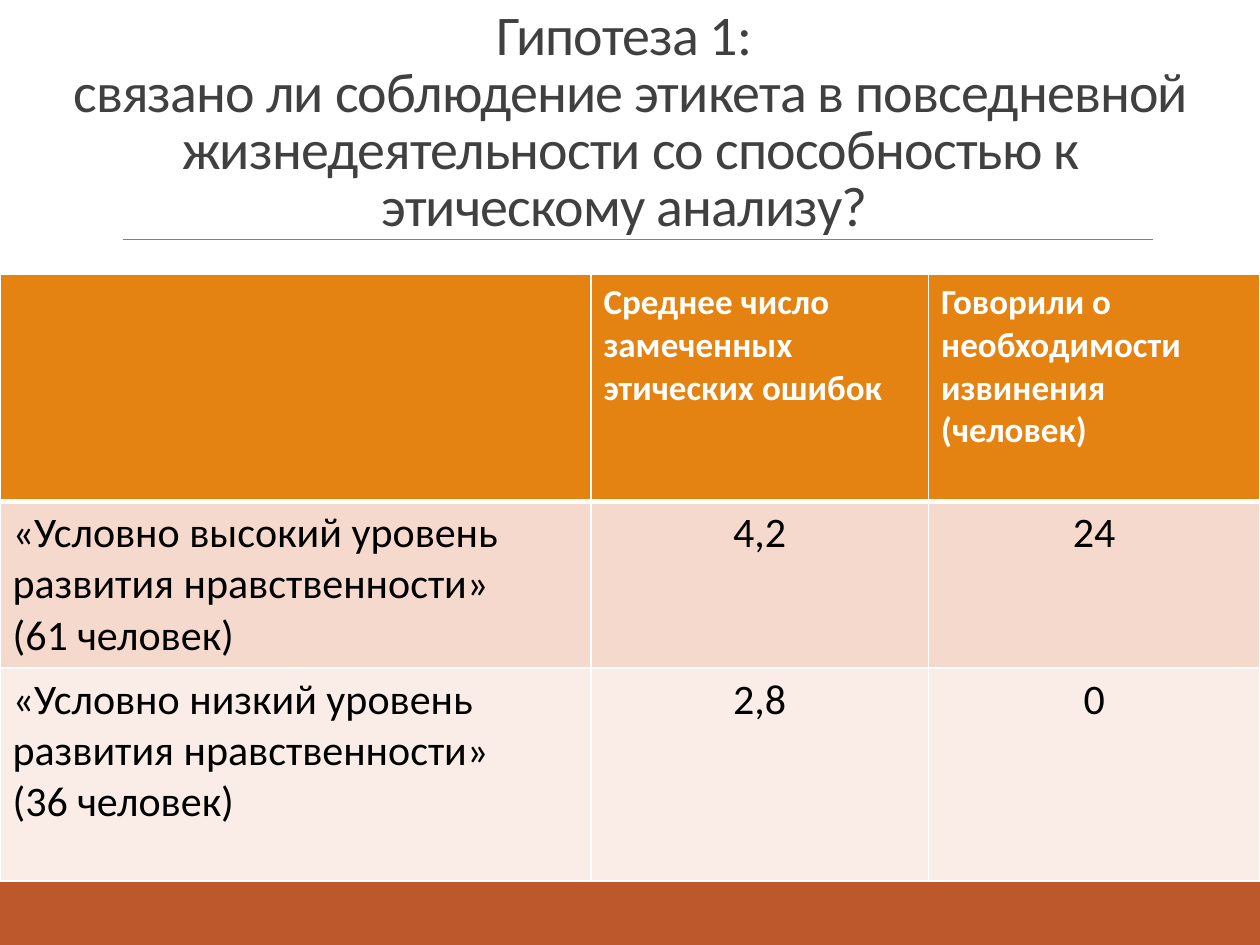
from copy import deepcopy
from dataclasses import dataclass
from pptx import Presentation
from pptx.dml.color import RGBColor as Rgb
from pptx.enum.shapes import MSO_CONNECTOR as Conn, MSO_SHAPE as Kind
from pptx.enum.text import MSO_ANCHOR as Anchor, MSO_AUTO_SIZE as Fit, PP_ALIGN as Align
from pptx.oxml.ns import qn
from pptx.oxml.xmlchemy import OxmlElement as Node
from pptx.util import Inches, Pt


@dataclass(frozen=True)
class Theme:
    font: str = "Calibri"
    ink: str = "404040"
    text: str = "000000"
    white: str = "FFFFFF"
    rule: str = "808080"
    rust: str = "BD582C"
    amber: str = "E48312"
    bands: tuple = ("F5D9CC", "FAEDE7")
    title: int = 32
    head: int = 20
    body: int = 24


class Deck:
    def __init__(self, theme):
        self.theme = theme
        self.prs = Presentation()
        self.prs.slide_width, self.prs.slide_height = Inches(10), Inches(7.5)
        self.slide = self.prs.slides.add_slide(self.prs.slide_layouts[5])

    def style(self, frame, size, color, bold=False, align=Align.LEFT):
        for para in frame.paragraphs:
            para.alignment = align
            for run in para.runs:
                font = run.font
                font.name, font.size, font.bold = self.theme.font, Pt(size), bold
                font.color.rgb = Rgb.from_string(color)

    def bar(self, top, height, color):
        box = self.slide.shapes.add_shape(
            Kind.RECTANGLE, 0, Inches(top), Inches(10), Inches(height))
        box.shadow.inherit = False
        box.fill.solid()
        box.fill.fore_color.rgb = Rgb.from_string(color)
        box.line.fill.background()

    def rule(self, left, right, y):
        line = self.slide.shapes.add_connector(
            Conn.STRAIGHT, Inches(left), Inches(y), Inches(right), Inches(y))
        line.line.color.rgb = Rgb.from_string(self.theme.rule)
        line.line.width = Pt(0.5)
        line._element.spPr.append(Node("a:effectLst"))

    def title(self, text, left, top, width, height):
        box = self.slide.shapes.title
        box.left, box.top = Inches(left), Inches(top)
        box.width, box.height = Inches(width), Inches(height)
        frame = box.text_frame
        frame.text = text
        frame.word_wrap, frame.auto_size = True, Fit.NONE
        frame.vertical_anchor = Anchor.BOTTOM
        self.style(frame, self.theme.title, self.theme.ink, align=Align.CENTER)
        para = frame.paragraphs[0]
        para.line_spacing = 0.85
        for run in para.runs:
            run.font._element.set("spc", "-50")
        # The line break takes the same type size as the words
        for mark in para._p.findall(qn("a:br")):
            mark.append(deepcopy(para.runs[0].font._element))

    def edges(self, cell, base):
        props = cell._tc.get_or_add_tcPr()
        widths = {"L": 1, "R": 1, "T": 1, "B": base}
        for spot, (side, width) in enumerate(widths.items()):
            line = Node(f"a:ln{side}")
            line.set("w", str(Pt(width)))
            fill, color = Node("a:solidFill"), Node("a:srgbClr")
            color.set("val", self.theme.white)
            fill.append(color)
            line.append(fill)
            props.insert(spot, line)

    def table(self, data, top, cols, rows):
        theme = self.theme
        grid = self.slide.shapes.add_table(
            len(rows), len(cols), 0, Inches(top),
            Inches(sum(cols)), Inches(sum(rows))).table
        for col, width in zip(grid.columns, cols):
            col.width = Inches(width)
        for row, height in zip(grid.rows, rows):
            row.height = Inches(height)
        for r, line in enumerate(data):
            for c, text in enumerate(line):
                cell = grid.cell(r, c)
                cell.text_frame.text = text
                tint = theme.bands[(r - 1) % 2] if r else theme.amber
                cell.fill.solid()
                cell.fill.fore_color.rgb = Rgb.from_string(tint)
                if r:
                    align = Align.CENTER if c else Align.LEFT
                    self.style(cell.text_frame, theme.body, theme.text, align=align)
                else:
                    self.style(cell.text_frame, theme.head, theme.white, bold=True)
                self.edges(cell, 1 if r else 3)
                if r == 1:
                    cell._tc.tcPr.find(qn("a:lnT")).set("w", str(Pt(3)))


def main():
    theme = Theme()
    deck = Deck(theme)

    # Footer bands and title rule
    deck.bar(7, 0.5, theme.rust)
    deck.bar(6.93, 0.07, theme.amber)
    deck.rule(0.98, 9.15, 1.9)

    # Title
    deck.title("Гипотеза 1: \vсвязано ли соблюдение этикета в повседневной "
               "жизнедеятельности со способностью к этическому анализу? ",
               0.28, 0.13, 9.45, 1.81)

    # Results table
    data = [
        ("", "Среднее число замеченных этических ошибок",
         "Говорили о необходимости извинения (человек)"),
        ("«Условно высокий уровень развития нравственности»\n(61 человек)",
         "4,2", "24"),
        ("«Условно низкий уровень развития нравственности»\n(36 человек)",
         "2,8", "0"),
    ]
    deck.table(data, 2.18, (4.69, 2.68, 2.63), (1.8, 1.32, 1.69))

    deck.prs.save("out.pptx")


if __name__ == "__main__":
    main()
